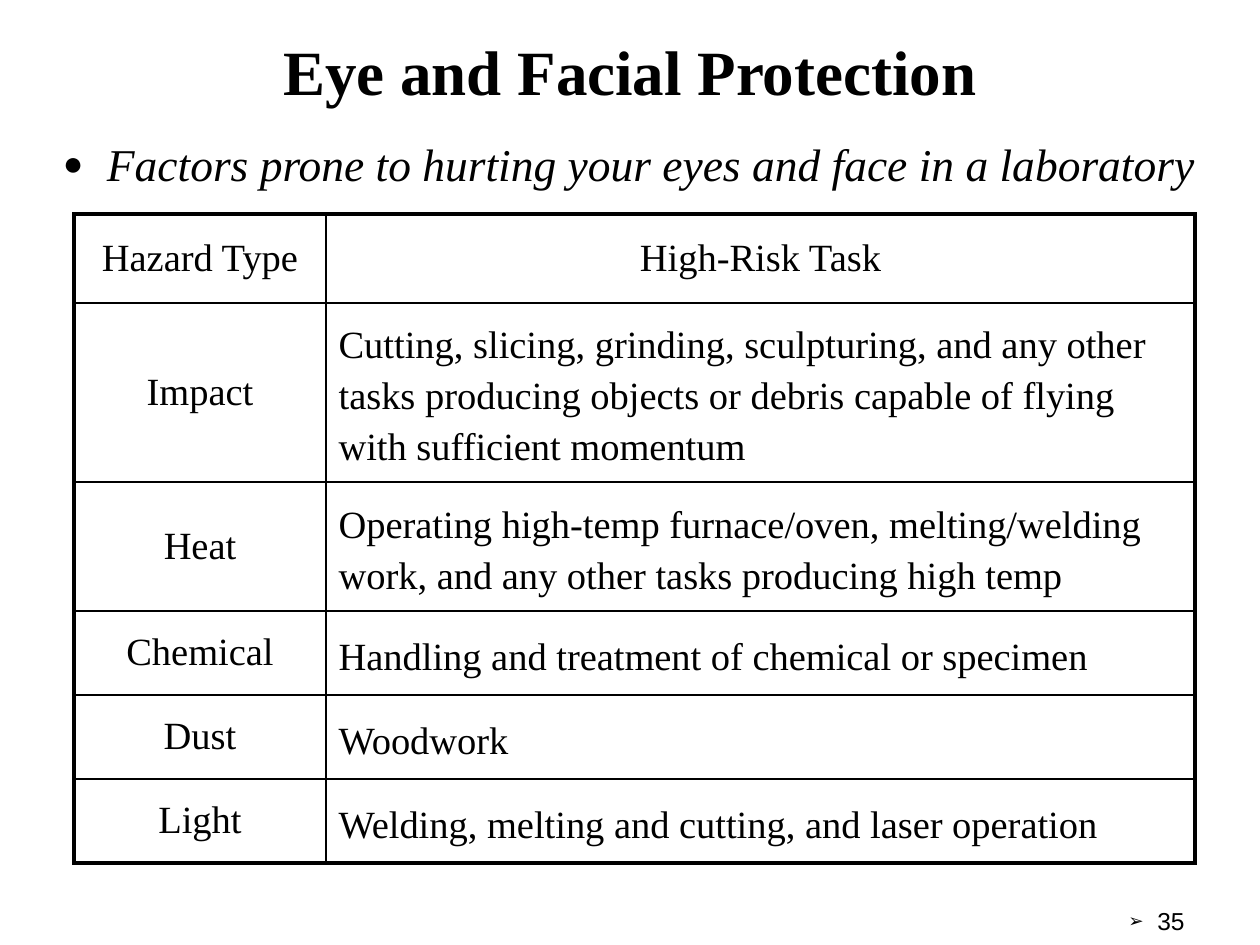
import pptx
import pptx.util
import pptx.dml.color
import pptx.enum.text
import pptx.oxml
import pptx.oxml.ns

TITLE = "Eye and Facial Protection"
LEAD = "Factors prone to hurting your eyes and face in a laboratory"
PAGE_NUMBER = "35"
HAZARDS = [
    ("Hazard Type", "High-Risk Task"),
    ("Impact", "Cutting, slicing, grinding, sculpturing, and any other tasks "
               "producing objects or debris capable of flying with sufficient momentum"),
    ("Heat", "Operating high-temp furnace/oven, melting/welding work, "
             "and any other tasks producing high temp"),
    ("Chemical", "Handling and treatment of chemical or specimen"),
    ("Dust", "Woodwork"),
    ("Light", "Welding, melting and cutting, and laser operation"),
]
COLUMN_WIDTHS = [252, 869]
ROW_HEIGHTS = [89, 179, 129, 84, 84, 84]
TABLE_LEFT, TABLE_TOP = 74, 214
BLACK = "000000"
SERIF, SANS = "Times New Roman", "Arial"
THIN, THICK = 1, 2.25

ALIGN = pptx.enum.text.PP_ALIGN
MIDDLE = pptx.enum.text.MSO_ANCHOR.MIDDLE


def px(count):
    return pptx.util.Emu(round(count * 914400 / 126))


def colour(value):
    return pptx.dml.color.RGBColor.from_string(value)


def xml(text):
    return pptx.oxml.parse_xml(text.replace(" ", f" {pptx.oxml.ns.nsdecls('a')} ", 1))


def write(frame, text, size, font, align=ALIGN.LEFT, bold=False, italic=False):
    frame.text = text
    frame.word_wrap = True
    para = frame.paragraphs[0]
    para.alignment = align
    style = para.runs[0].font
    style.size, style.name = pptx.util.Pt(size), font
    style.bold, style.italic = bold, italic
    style.color.rgb = colour(BLACK)
    return para


def set_bullet(para, char, percent, margin, indent):
    properties = para._p.get_or_add_pPr()
    properties.set("marL", str(px(margin)))
    properties.set("indent", str(px(indent)))
    properties.append(xml(f'<a:buClr ><a:srgbClr val="{BLACK}"/></a:buClr>'))
    properties.append(xml(f'<a:buSzPct val="{percent * 1000}"/>'))
    properties.append(xml(f'<a:buFont typeface="{SANS}"/>'))
    properties.append(xml(f'<a:buChar char="{char}"/>'))


def set_borders(cell, widths):
    """Draw the left, right, top and bottom edges, widths in points."""
    properties = cell._tc.get_or_add_tcPr()
    for index, (side, width) in enumerate(zip("LRTB", widths)):
        properties.insert(index, xml(
            f'<a:ln{side} w="{pptx.util.Pt(width)}"><a:solidFill>'
            f'<a:srgbClr val="{BLACK}"/></a:solidFill></a:ln{side}>'))


def add_hazard_table(page):
    last_row, last_column = len(ROW_HEIGHTS) - 1, len(COLUMN_WIDTHS) - 1
    table = page.shapes.add_table(
        len(ROW_HEIGHTS), len(COLUMN_WIDTHS), px(TABLE_LEFT), px(TABLE_TOP),
        px(sum(COLUMN_WIDTHS)), px(sum(ROW_HEIGHTS))).table
    table.first_row = table.horz_banding = False
    for column, width in zip(table.columns, COLUMN_WIDTHS):
        column.width = px(width)
    for r, texts in enumerate(HAZARDS):
        table.rows[r].height = px(ROW_HEIGHTS[r])
        for c, text in enumerate(texts):
            cell = table.cell(r, c)
            is_task = r > 0 and c > 0
            cell.vertical_anchor = MIDDLE
            cell.fill.background()
            para = write(cell.text_frame, text, 22, SERIF,
                         ALIGN.LEFT if is_task else ALIGN.CENTER)
            para.space_before = pptx.util.Pt(4.4)
            if is_task:
                para.line_spacing = 1.2
            outer = (c == 0, c == last_column, r == 0, r == last_row)
            set_borders(cell, [THICK if edge else THIN for edge in outer])


def main():
    deck = pptx.Presentation()
    deck.slide_width, deck.slide_height = px(1260), px(945)
    page = deck.slides.add_slide(deck.slide_layouts[5])

    title = page.shapes.title
    title.left, title.top, title.width, title.height = px(63), px(35), px(1134), px(70)
    write(title.text_frame, TITLE, 36, SERIF, ALIGN.CENTER, bold=True)
    title.text_frame.vertical_anchor = MIDDLE
    title.text_frame.auto_size = pptx.enum.text.MSO_AUTO_SIZE.NONE

    lead = page.shapes.add_textbox(px(39), px(112), px(1186), px(79)).text_frame
    lead.margin_left, lead.margin_top = px(8), px(13)
    para = write(lead, LEAD, 26, SERIF, italic=True)
    para.line_spacing = 1.2
    para.space_before = pptx.util.Pt(5.2)
    set_bullet(para, "●", 75, 60, -44)

    add_hazard_table(page)

    number = page.shapes.add_textbox(px(903), px(900), px(294), px(39)).text_frame
    para = write(number, PAGE_NUMBER, 14, SANS, ALIGN.RIGHT)
    set_bullet(para, "➢", 75, 29, -29)

    deck.save("out.pptx")


if __name__ == "__main__":
    main()
